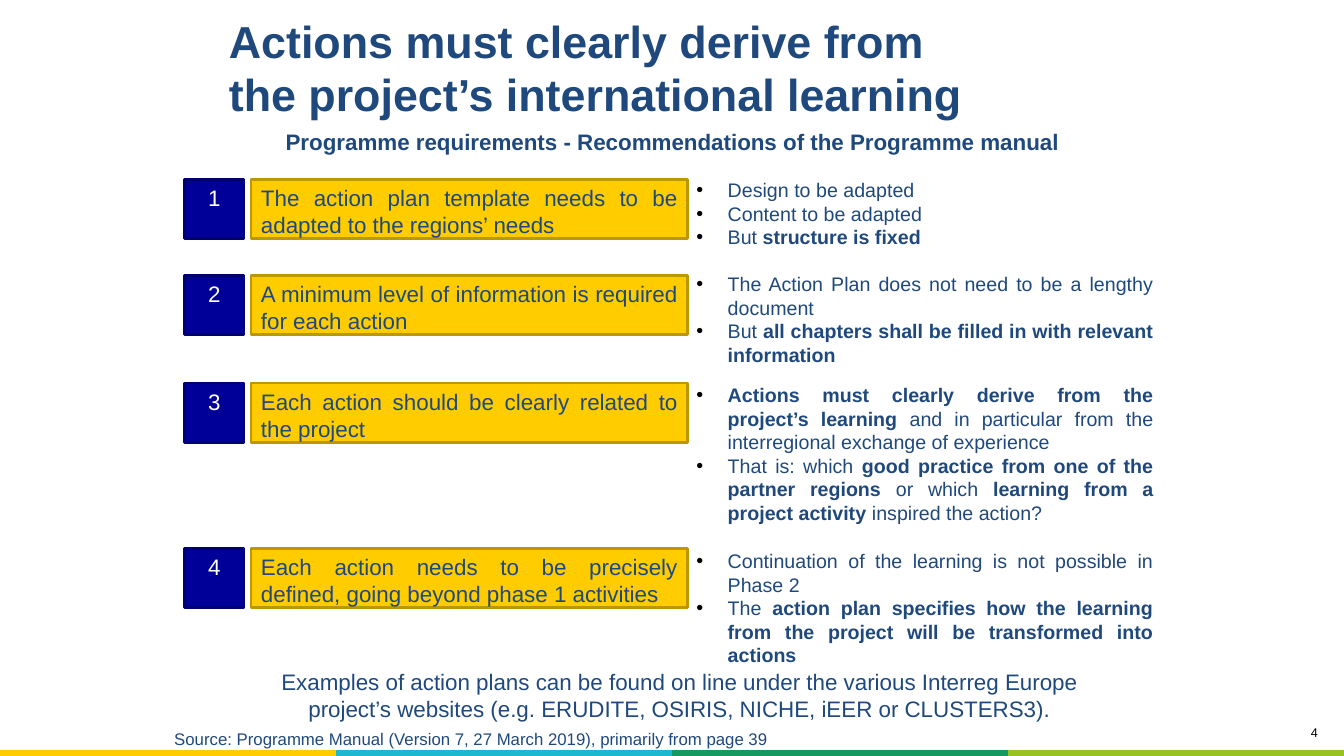
import pptx
import pptx.dml.color
import pptx.enum.shapes
import pptx.enum.text
import pptx.oxml
import pptx.oxml.ns
import pptx.util
from pptx.dml.color import RGBColor
from pptx.enum.text import PP_ALIGN
from pptx.util import Inches

NAVY_TEXT = RGBColor(0x1F, 0x49, 0x7D)
BLACK = RGBColor(0, 0, 0)
WHITE = RGBColor(0xFF, 0xFF, 0xFF)
YELLOW = RGBColor(0xFF, 0xCC, 0x00)
YELLOW_EDGE = RGBColor(0xBD, 0x97, 0x00)
BLUE = RGBColor(0x00, 0x00, 0x99)
BLUE_EDGE = RGBColor(0x00, 0x00, 0x71)
STRIPE_COLOURS = [
    YELLOW,
    RGBColor(0x1C, 0xB8, 0xCF),
    RGBColor(0x15, 0x99, 0x61),
    RGBColor(0x98, 0xC2, 0x22),
]
PLAIN_TABLE_STYLE = "{2D5ABB26-0587-4C30-8999-92F81FD0307C}"

REQUIREMENTS = [
    (1.78, "The action plan template needs to be adapted to the regions’ needs",
     1.72, ["Design to be adapted",
            "Content to be adapted",
            "But **structure is fixed"]),
    (2.73, "A minimum level of information is required for each action",
     2.65, ["The Action Plan does not need to be a lengthy document",
            "But **all chapters shall be filled in with relevant information"]),
    (3.8, "Each action should be clearly related to the project",
     3.75, ["**Actions must clearly derive from the project’s learning **"
            "and in particular from the interregional exchange of experience",
            "That is: which **good practice from one of the partner regions** or which "
            "**learning from a project activity **inspired the action?"]),
    (5.44, "Each action needs to be precisely defined, going beyond phase 1 activities",
     5.4, ["Continuation of the learning is not possible in Phase 2",
           "The **action plan specifies how the learning from the project "
           "will be transformed into actions"]),
]


def format_paragraph(paragraph, size, align, colour=NAVY_TEXT, bold=None):
    """Set the alignment and font of one paragraph."""
    paragraph.alignment = align
    paragraph.font.name = "Arial"
    paragraph.font.size = pptx.util.Pt(size)
    paragraph.font.color.rgb = colour
    paragraph.font.bold = bold


def add_bullet(paragraph):
    """Give a paragraph a black round bullet with a hanging indent."""
    properties = paragraph._p.get_or_add_pPr()
    properties.set("marL", str(Inches(0.31)))
    properties.set("indent", str(Inches(-0.31)))
    namespace = pptx.oxml.ns.nsdecls("a")
    for bullet in (
        f'<a:buClr {namespace}><a:srgbClr val="{BLACK}"/></a:buClr>',
        f'<a:buFont {namespace} typeface="Arial"/>',
        f'<a:buChar {namespace} char="•"/>',
    ):
        properties.append(pptx.oxml.parse_xml(bullet))


def add_text(slide, box, text, size, align, colour=NAVY_TEXT, bold=None):
    """Place a wrapped one-paragraph text in a box."""
    frame = slide.shapes.add_textbox(*map(Inches, box)).text_frame
    frame.word_wrap = True
    frame.text = text
    format_paragraph(frame.paragraphs[0], size, align, colour, bold)


def add_panel(slide, box, text, fill, edge, colour, align):
    """Place a filled rectangle with text that starts at its top."""
    panel = slide.shapes.add_shape(
        pptx.enum.shapes.MSO_SHAPE.RECTANGLE, *map(Inches, box))
    panel.shadow.inherit = False
    panel.fill.solid()
    panel.fill.fore_color.rgb = fill
    panel.line.color.rgb = edge
    panel.line.width = pptx.util.Pt(2)
    frame = panel.text_frame
    frame.word_wrap = True
    frame.vertical_anchor = pptx.enum.text.MSO_ANCHOR.TOP
    frame.text = text
    format_paragraph(frame.paragraphs[0], 16, align, colour)


def add_notes_list(slide, box, notes):
    """Place bulleted notes, with bold parts set off by double asterisks."""
    frame = slide.shapes.add_textbox(*map(Inches, box)).text_frame
    frame.word_wrap = True
    for index, note in enumerate(notes):
        paragraph = frame.add_paragraph() if index else frame.paragraphs[0]
        add_bullet(paragraph)
        format_paragraph(paragraph, 14, PP_ALIGN.JUSTIFY)
        for part, words in enumerate(note.split("**")):
            if words:
                run = paragraph.add_run()
                run.text = words
                if part % 2:
                    run.font.bold = True


def add_requirement(slide, left, top, number, requirement, notes_top, notes):
    """Place a numbered requirement with its notes on the right."""
    side = 0.59
    add_panel(slide, (left, top, side, side), str(number),
              BLUE, BLUE_EDGE, WHITE, PP_ALIGN.CENTER)
    add_panel(slide, (left + 0.66, top, 4.33, side), requirement,
              YELLOW, YELLOW_EDGE, NAVY_TEXT, PP_ALIGN.JUSTIFY)
    add_notes_list(slide, (left + 4.98, notes_top, 4.73, 0.8), notes)


def add_heading(slide, box):
    """Move the title into its box and set its text."""
    title = slide.shapes.title
    title.left, title.top, title.width, title.height = map(Inches, box)
    frame = title.text_frame
    frame.auto_size = pptx.enum.text.MSO_AUTO_SIZE.NONE
    frame.vertical_anchor = pptx.enum.text.MSO_ANCHOR.MIDDLE
    frame.text = "Actions must clearly derive from the project’s international learning"
    format_paragraph(frame.paragraphs[0], 32, PP_ALIGN.LEFT, bold=True)


def add_stripe(slide, box):
    """Place the four-colour stripe without borders along the bottom edge."""
    stripe = slide.shapes.add_table(1, len(STRIPE_COLOURS), *map(Inches, box)).table
    stripe.first_row = stripe.horz_banding = False
    style = stripe._tbl.tblPr.find(pptx.oxml.ns.qn("a:tableStyleId"))
    style.text = PLAIN_TABLE_STYLE
    for cell, colour in zip(stripe.rows[0].cells, STRIPE_COLOURS):
        cell.fill.solid()
        cell.fill.fore_color.rgb = colour


def main():
    """Build the slide and save it."""
    presentation = pptx.Presentation()
    presentation.slide_width = Inches(13.33)
    presentation.slide_height = Inches(7.5)
    slide = presentation.slides.add_slide(presentation.slide_layouts[5])
    add_stripe(slide, (0, 7.44, 13.33, 0.17))
    add_text(slide, (10.55, 7.14, 2.62, 0.31), "4", 9, PP_ALIGN.RIGHT, BLACK)
    add_heading(slide, (2.17, 0.36, 7.73, 0.61))
    add_text(slide, (2.67, 1.22, 8, 0.43),
             "Programme requirements - Recommendations of the Programme manual",
             16, PP_ALIGN.CENTER, bold=True)
    for number, (top, requirement, notes_top, notes) in enumerate(REQUIREMENTS, 1):
        add_requirement(slide, 1.83, top, number, requirement, notes_top, notes)
    add_text(slide, (2.41, 6.58, 8.66, 0.59),
             "Examples of action plans can be found on line under the various Interreg "
             "Europe project’s websites (e.g. ERUDITE, OSIRIS, NICHE, iEER or CLUSTERS3).",
             16, PP_ALIGN.CENTER)
    add_text(slide, (1.63, 7.18, 7.64, 0.29),
             "Source: Programme Manual (Version 7, 27 March 2019), primarily from page 39",
             12, PP_ALIGN.JUSTIFY)
    presentation.save("out.pptx")


if __name__ == "__main__":
    main()
